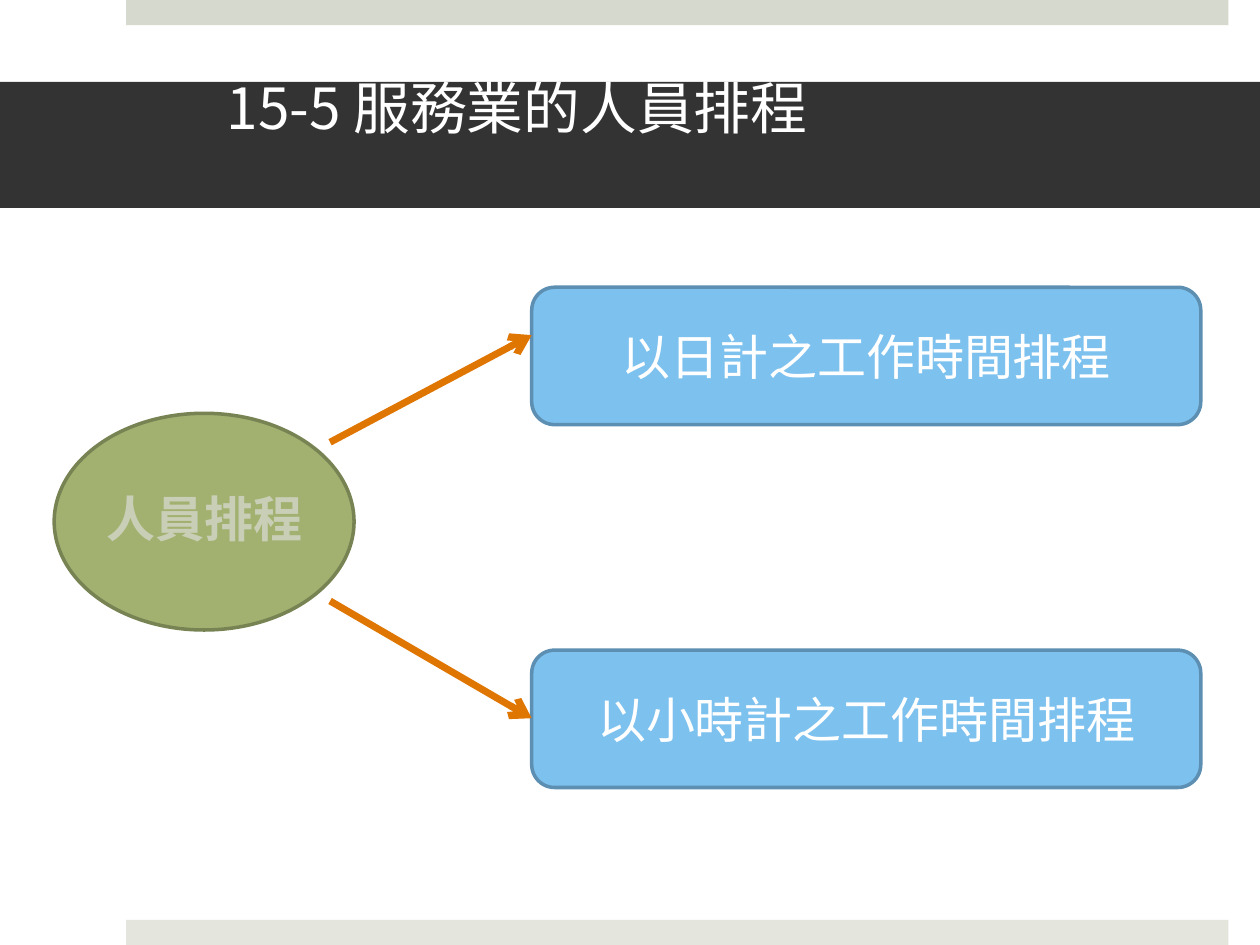
import pptx
import pptx.util
import pptx.dml.color
import pptx.enum.shapes
import pptx.enum.text
import pptx.oxml.ns
from lxml import etree

Inches = pptx.util.Inches
Pt = pptx.util.Pt
SHAPES = pptx.enum.shapes.MSO_SHAPE
ALIGN = pptx.enum.text.PP_ALIGN
ANCHOR = pptx.enum.text.MSO_ANCHOR
qn = pptx.oxml.ns.qn

FONT = "Noto Sans CJK SC"
COLORS = {
    "top_bar": "D6D9CD",
    "bottom_bar": "E4E6DE",
    "band": "333333",
    "white": "FFFFFF",
    "box": "7DC1EF",
    "box_line": "5C8FB1",
    "oval": "A2B170",
    "oval_line": "788353",
    "oval_text": "C9CFB7",
    "arrow": "E07602",
}


def rgb(name):
    return pptx.dml.color.RGBColor.from_string(COLORS[name])


def write_text(shape, text, size=28, color="white", bold=False, align=ALIGN.CENTER,
               anchor=ANCHOR.MIDDLE, margins=(0, 0, 0, 0), line_spacing=1.0):
    """Fill a shape with one formatted paragraph; margins are left, top, right, bottom."""
    frame = shape.text_frame
    frame.word_wrap = True
    frame.auto_size = pptx.enum.text.MSO_AUTO_SIZE.NONE
    frame.vertical_anchor = anchor
    (frame.margin_left, frame.margin_top,
     frame.margin_right, frame.margin_bottom) = map(Inches, margins)
    paragraph = frame.paragraphs[0]
    paragraph.alignment = align
    paragraph.line_spacing = line_spacing
    run = paragraph.add_run()
    run.text = text
    run.font.size = Pt(size)
    run.font.bold = bold
    run.font.color.rgb = rgb(color)
    run.font.name = FONT
    etree.SubElement(run.font._element, qn("a:ea"), typeface=FONT)


def add_box(slide, kind, box, fill, line=None):
    shape = slide.shapes.add_shape(kind, *map(Inches, box))
    shape.shadow.inherit = False
    shape.fill.solid()
    shape.fill.fore_color.rgb = rgb(fill)
    if line:
        shape.line.color.rgb = rgb(line)
        shape.line.width = Pt(2)
    else:
        shape.line.fill.background()
    return shape


def add_arrow(slide, start, end):
    connector = slide.shapes.add_connector(
        pptx.enum.shapes.MSO_CONNECTOR.STRAIGHT, *map(Inches, start + end))
    connector.line.color.rgb = rgb("arrow")
    connector.line.width = Pt(4)
    etree.SubElement(connector.line._get_or_add_ln(), qn("a:tailEnd"), type="arrow")
    etree.SubElement(connector._element.spPr, qn("a:effectLst"))


def add_edge_bars(slide, left, width, height, slide_height):
    add_box(slide, SHAPES.RECTANGLE, (left, 0, width, height), "top_bar")
    add_box(slide, SHAPES.RECTANGLE,
            (left, slide_height - height, width, height), "bottom_bar")


def add_title_band(slide, box):
    title = slide.shapes.title
    title.left, title.top, title.width, title.height = map(Inches, box)
    title.fill.solid()
    title.fill.fore_color.rgb = rgb("band")
    write_text(title, "15-5 服務業的人員排程", size=32.4, align=ALIGN.LEFT,
               anchor=ANCHOR.TOP, margins=(1.8, 0.03, 0.3, 0.05), line_spacing=0.8)


def add_branches(slide, box):
    """Oval on the left, with an arrow to each of two boxes on the right."""
    left, top, width, height = box
    box_width, box_height = 5.31, 1.09
    box_left = left + width - box_width

    # Topic
    oval_width, oval_height = 2.38, 1.72
    oval = add_box(slide, SHAPES.OVAL, (left, top + 1, oval_width, oval_height),
                   "oval", "oval_line")
    write_text(oval, "人員排程", color="oval_text", bold=True, line_spacing=0.9)

    # Branches: text, box top, arrow start and end heights
    branches = [
        ("以日計之工作時間排程", top, 3.51, 2.66),
        ("以小時計之工作時間排程", top + height - box_height, 4.77, 5.7),
    ]
    for text, box_top, start_y, end_y in branches:
        branch = add_box(slide, SHAPES.ROUNDED_RECTANGLE,
                         (box_left, box_top, box_width, box_height), "box", "box_line")
        write_text(branch, text)
        add_arrow(slide, (2.62, start_y), (box_left, end_y))


def main():
    presentation = pptx.Presentation()
    presentation.slide_width = Inches(10)
    presentation.slide_height = Inches(7.5)
    slide = presentation.slides.add_slide(presentation.slide_layouts[5])
    add_edge_bars(slide, 1, 8.75, 0.2, 7.5)
    add_title_band(slide, (0, 0.65, 10, 1))
    add_branches(slide, (0.43, 2.28, 9.1, 3.97))
    presentation.save("out.pptx")


if __name__ == "__main__":
    main()
